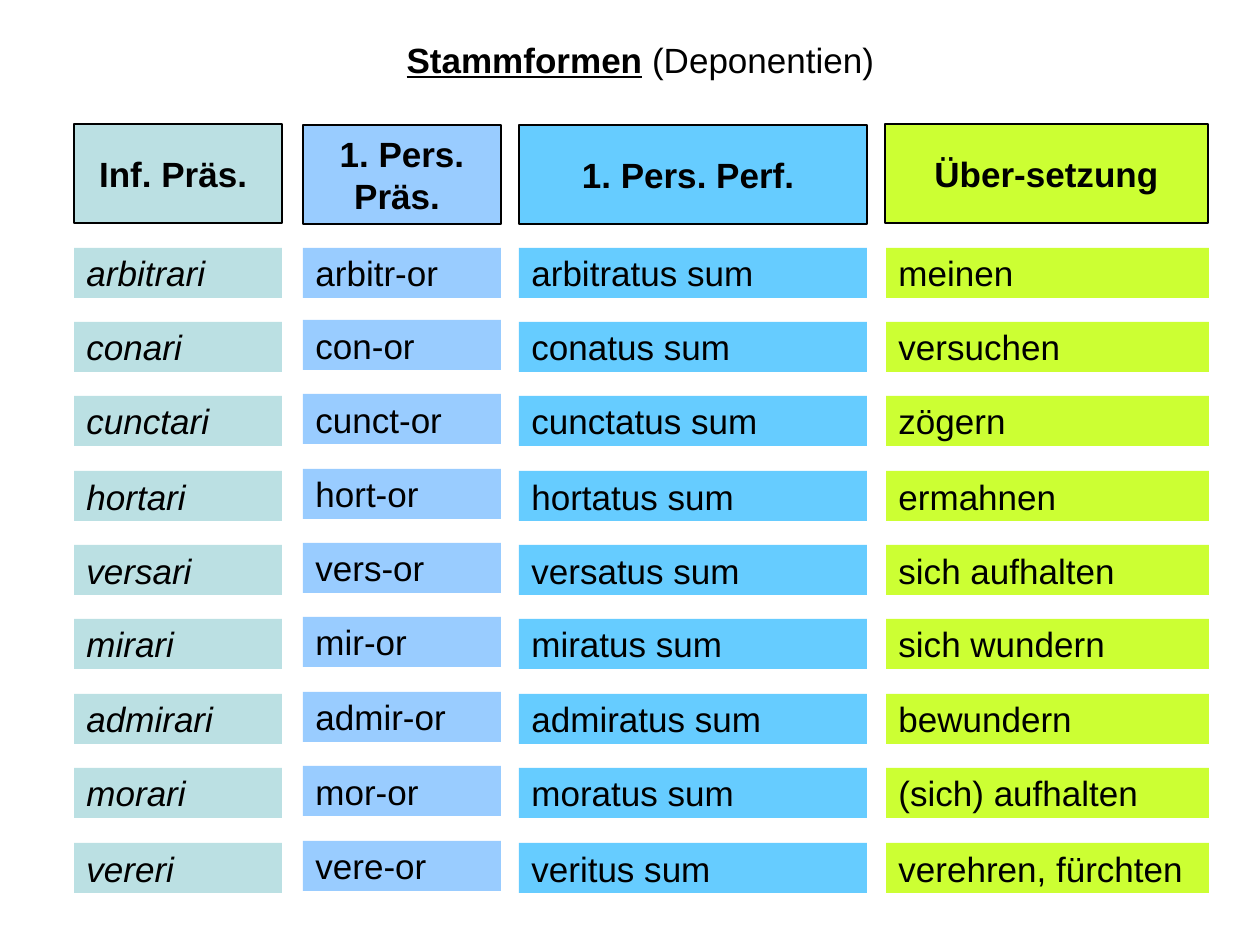
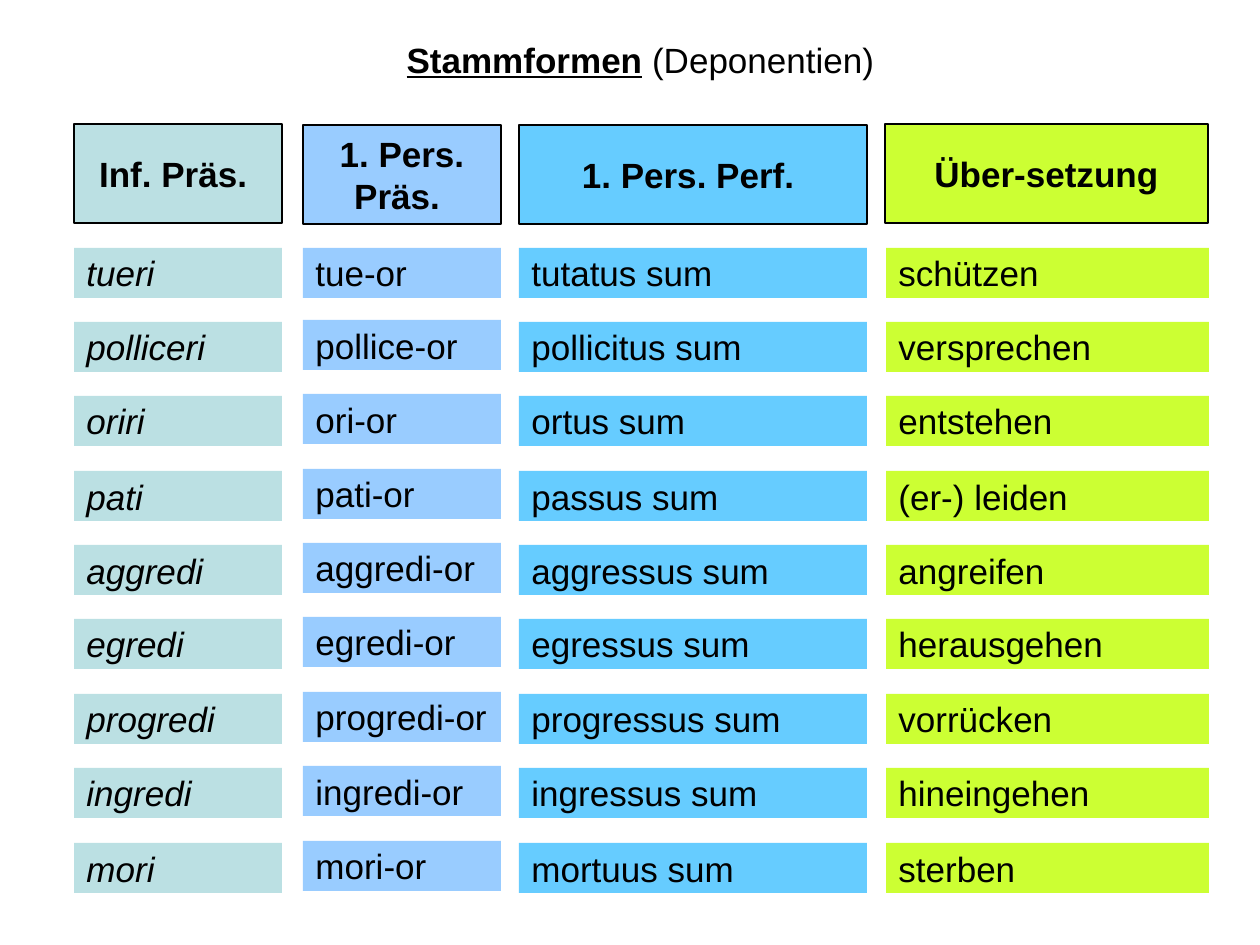
from dataclasses import dataclass
from typing import Any

from pptx import Presentation
from pptx.dml.color import RGBColor
from pptx.enum.shapes import MSO_SHAPE as Preset
from pptx.enum.text import MSO_ANCHOR as Anchor, PP_ALIGN as Align
from pptx.util import Emu, Pt

PIXELS_PER_INCH = 126
SLIDE_WIDTH, SLIDE_HEIGHT = 1260, 945
HEADER_HEIGHT = 99
ROW_HEIGHT = 50
FIRST_ROW_TOP, LAST_ROW_TOP = 248, 843

COLORS = {
    "text": "000000",
    "infinitive": "BBE0E3",
    "present": "99CCFF",
    "perfect": "66CCFF",
    "translation": "CCFF33",
}
BASE_FONT = {"name": "Arial", "size": Pt(20), "bold": False, "italic": False, "underline": False}


@dataclass(frozen=True)
class Box:
    left: int
    top: int
    width: int
    height: int


@dataclass(frozen=True)
class Column:
    heading: str
    color: str
    left: int
    width: int
    header_left: int
    header_top: int
    italic: bool = False
    later_rows_shift: int = 0


TITLE_BOX = Box(105, 25, 1071, 69)
COLUMNS = (
    Column("Inf. Präs. ", "infinitive", 74, 208, 74, 124, italic=True),
    Column("1. Pers. Präs. ", "present", 303, 198, 303, 125, later_rows_shift=-2),
    Column("1. Pers. Perf. ", "perfect", 519, 348, 519, 125),
    Column("Über-setzung", "translation", 886, 323, 885, 124),
)
VERB_LISTS = (
    (
        ("arbitrari", "arbitr-or", "arbitratus sum", "meinen"),
        ("conari", "con-or", "conatus sum", "versuchen"),
        ("cunctari", "cunct-or", "cunctatus sum", "zögern"),
        ("hortari", "hort-or", "hortatus sum", "ermahnen"),
        ("versari", "vers-or", "versatus sum", "sich aufhalten"),
        ("mirari", "mir-or", "miratus sum", "sich wundern"),
        ("admirari", "admir-or", "admiratus sum", "bewundern"),
        ("morari", "mor-or", "moratus sum", "(sich) aufhalten"),
        ("vereri", "vere-or", "veritus sum", "verehren, fürchten"),
    ),
    (
        ("tueri", "tue-or", "tutatus sum", "schützen"),
        ("polliceri", "pollice-or", "pollicitus sum", "versprechen"),
        ("oriri", "ori-or", "ortus sum", "entstehen"),
        ("pati", "pati-or", "passus sum", "(er-) leiden"),
        ("aggredi", "aggredi-or", "aggressus sum", "angreifen"),
        ("egredi", "egredi-or", "egressus sum", "herausgehen"),
        ("progredi", "progredi-or", "progressus sum", "vorrücken"),
        ("ingredi", "ingredi-or", "ingressus sum", "hineingehen"),
        ("mori", "mori-or", "mortuus sum", "sterben"),
    ),
)


def px(length: int) -> Emu:
    return Emu(length * 914400 // PIXELS_PER_INCH)


def place(box: Box) -> tuple[Emu, ...]:
    return px(box.left), px(box.top), px(box.width), px(box.height)


def rgb(color: str) -> RGBColor:
    return RGBColor.from_string(COLORS[color])


def set_attributes(target: Any, values: dict[str, Any]) -> None:
    for name, value in values.items():
        setattr(target, name, value)


def add_run(paragraph: Any, text: str, **font_values: Any) -> None:
    run = paragraph.add_run()
    run.text = text
    set_attributes(run.font, BASE_FONT | font_values)
    run.font.color.rgb = rgb("text")


def prepare_paragraph(shape: Any, **paragraph_values: Any) -> Any:
    set_attributes(shape.text_frame, {"word_wrap": True, "vertical_anchor": Anchor.MIDDLE})
    paragraph = shape.text_frame.paragraphs[0]
    set_attributes(paragraph, paragraph_values)
    return paragraph


def add_title(slide: Any) -> None:
    shape = slide.shapes.add_textbox(*place(TITLE_BOX))
    paragraph = prepare_paragraph(shape, alignment=Align.CENTER)
    add_run(paragraph, "Stammformen", bold=True, underline=True)
    add_run(paragraph, " (Deponentien)")


def add_cell(slide: Any, box: Box, text: str, color: str, alignment: Align, **font_values: Any) -> Any:
    shape = slide.shapes.add_shape(Preset.RECTANGLE, *place(box))
    shape.shadow.inherit = False
    shape.fill.solid()
    shape.fill.fore_color.rgb = rgb(color)
    shape.line.fill.background()
    paragraph = prepare_paragraph(shape, alignment=alignment, space_before=Pt(4))
    add_run(paragraph, text, **font_values)
    return shape


def add_column(slide: Any, column: Column, words: tuple[str, ...]) -> None:
    header_box = Box(column.header_left, column.header_top, column.width, HEADER_HEIGHT)
    header = add_cell(slide, header_box, column.heading, column.color, Align.CENTER, bold=True)
    header.line.color.rgb = rgb("text")
    header.line.width = Pt(0.75)
    for index, word in enumerate(words):
        top = FIRST_ROW_TOP + (LAST_ROW_TOP - FIRST_ROW_TOP) * index // (len(words) - 1)
        if index:
            top += column.later_rows_shift
        box = Box(column.left, top, column.width, ROW_HEIGHT)
        add_cell(slide, box, word, column.color, Align.LEFT, italic=column.italic)


def main() -> None:
    presentation = Presentation()
    set_attributes(presentation, {"slide_width": px(SLIDE_WIDTH), "slide_height": px(SLIDE_HEIGHT)})
    for verbs in VERB_LISTS:
        slide = presentation.slides.add_slide(presentation.slide_layouts[6])
        add_title(slide)
        for column, words in zip(COLUMNS, zip(*verbs)):
            add_column(slide, column, words)
    presentation.save("out.pptx")


if __name__ == "__main__":
    main()
